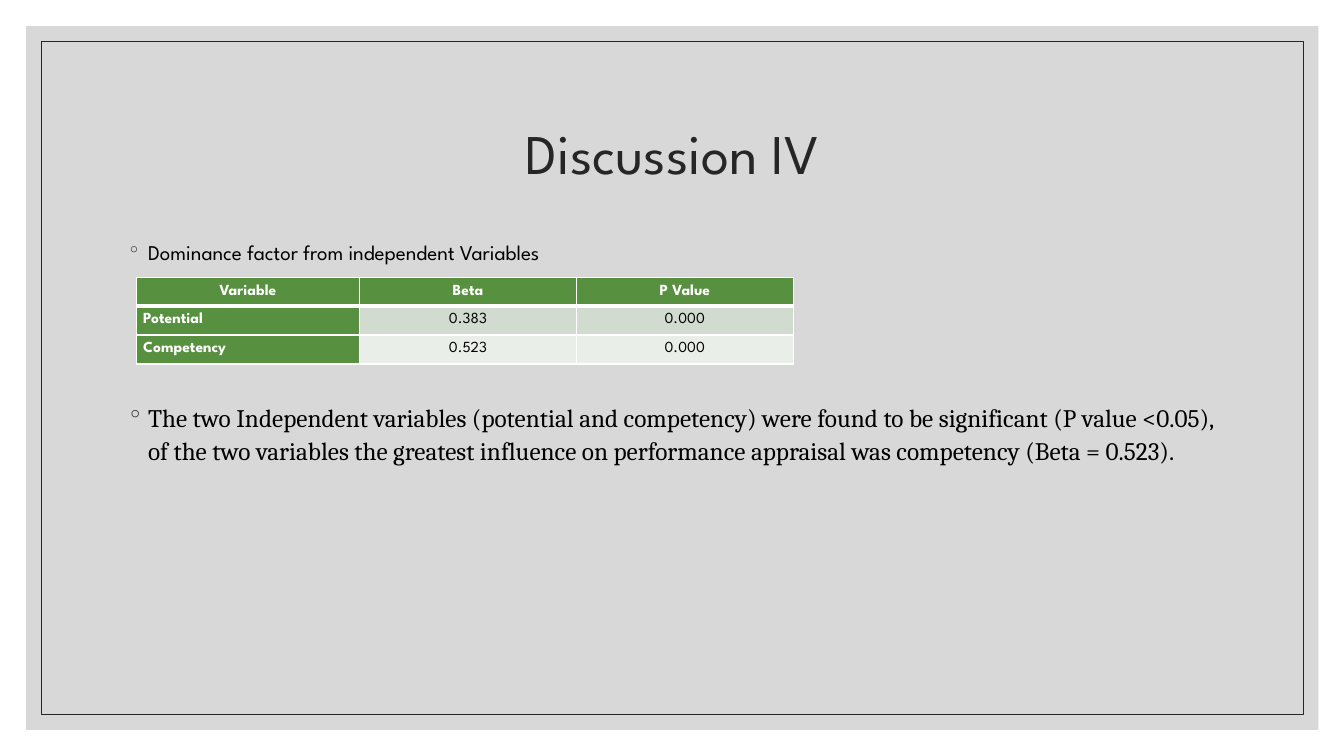
from dataclasses import dataclass

from lxml.etree import SubElement
from pptx import Presentation
from pptx.dml.color import RGBColor
from pptx.enum.shapes import MSO_SHAPE
from pptx.enum.text import MSO_ANCHOR, MSO_AUTO_SIZE, PP_ALIGN
from pptx.oxml.ns import qn
from pptx.util import Emu, Inches, Pt

COLORS = {
    "ink": "262626",
    "text": "000000",
    "white": "FFFFFF",
    "panel": "BFBFBF",
    "green": "57903F",
    "band_dark": "D1DBCF",
    "band_light": "EAEEE8",
}
SANS, SERIF = "League Spartan", "Cambria"
WIDTH, HEIGHT = Inches(13.33), Inches(7.5)


@dataclass(frozen=True)
class Box:
    """Place and size as percentages of the slide."""
    left: float
    top: float
    width: float
    height: float

    def lengths(self) -> tuple[Emu, Emu, Emu, Emu]:
        return (Emu(int(WIDTH * self.left / 100)), Emu(int(HEIGHT * self.top / 100)),
                Emu(int(WIDTH * self.width / 100)), Emu(int(HEIGHT * self.height / 100)))


@dataclass(frozen=True)
class Bullet:
    text: str
    font: str
    size: int
    space_before: int


PANEL = Box(1.95, 3.47, 96.15, 93.07)
FRAME = Box(3.08, 5.47, 93.9, 89.07)
TITLE = Box(8.78, 10.67, 82.5, 20)
BODY = Box(8.78, 30.67, 82.5, 56.13)
TABLE = Box(10.13, 36.67, 48.9, 11.47)

BULLETS = [
    Bullet("Dominance factor from independent Variables", SANS, 15, 9),
    Bullet("The two Independent variables (potential and competency) were found to be "
           "significant (P value <0.05), of the two variables the greatest influence on "
           "performance appraisal was competency (Beta = 0.523).", SERIF, 18, 96),
]
TABLE_ROWS = [
    ("Variable", "Beta", "P Value"),
    ("Potential", "0.383", "0.000"),
    ("Competency", "0.523", "0.000"),
]
COLUMN_SHARES = (0.34, 0.33, 0.33)
ROW_FILLS = ("green", "band_dark", "band_light")


def rgb(name: str) -> RGBColor:
    return RGBColor.from_string(COLORS[name])


def format_runs(paragraph, font: str, size: int, color: str, bold: bool = False) -> None:
    for run in paragraph.runs:
        run.font.name = font
        run.font.size = Pt(size)
        run.font.bold = bold
        run.font.color.rgb = rgb(color)


def add_rectangle(slide, box: Box):
    shape = slide.shapes.add_shape(MSO_SHAPE.RECTANGLE, *box.lengths())
    shape.shadow.inherit = False
    return shape


def add_background(slide) -> None:
    panel = add_rectangle(slide, PANEL)
    panel.fill.solid()
    panel.fill.fore_color.rgb = rgb("panel")
    color = panel.element.spPr.find(qn("a:solidFill"))[0]
    SubElement(color, qn("a:alpha")).set("val", "60000")
    panel.line.fill.background()

    frame = add_rectangle(slide, FRAME)
    frame.fill.background()
    frame.line.color.rgb = rgb("ink")
    frame.line.width = Pt(0.5)


def set_title(slide, text: str) -> None:
    """Fill the title placeholder and bring it in front of the background."""
    title = slide.shapes.title
    title.element.getparent().append(title.element)
    title.left, title.top, title.width, title.height = TITLE.lengths()
    frame = title.text_frame
    frame.text = text
    frame.auto_size = MSO_AUTO_SIZE.NONE
    frame.vertical_anchor = MSO_ANCHOR.MIDDLE
    paragraph = frame.paragraphs[0]
    paragraph.alignment = PP_ALIGN.CENTER
    paragraph.line_spacing = 0.9
    format_runs(paragraph, SANS, 40, "ink")


def add_bullet_mark(paragraph) -> None:
    properties = paragraph._p.get_or_add_pPr()
    properties.set("marL", str(Inches(0.2)))
    properties.set("indent", str(-Inches(0.2)))
    color = SubElement(properties, qn("a:buClr"))
    SubElement(color, qn("a:srgbClr")).set("val", COLORS["ink"])
    SubElement(properties, qn("a:buFont")).set("typeface", SANS)
    SubElement(properties, qn("a:buChar")).set("char", "◦")


def add_body(slide, bullets: list[Bullet]) -> None:
    frame = slide.shapes.add_textbox(*BODY.lengths()).text_frame
    frame.word_wrap = True
    frame.text = "\n".join(bullet.text for bullet in bullets)
    for paragraph, bullet in zip(frame.paragraphs, bullets):
        paragraph.line_spacing = 1.1
        paragraph.space_before = Pt(bullet.space_before)
        add_bullet_mark(paragraph)
        format_runs(paragraph, bullet.font, bullet.size, "text")


def set_borders(cell, top: int, bottom: int) -> None:
    """Draw white borders; the side borders are 1 point wide."""
    properties = cell._tc.get_or_add_tcPr()
    for side, points in (("L", 1), ("R", 1), ("T", top), ("B", bottom)):
        line = SubElement(properties, qn(f"a:ln{side}"), w=str(Pt(points)))
        fill = SubElement(line, qn("a:solidFill"))
        SubElement(fill, qn("a:srgbClr")).set("val", COLORS["white"])


def format_cell(cell, row: int, column: int) -> None:
    is_heading = row == 0 or column == 0
    set_borders(cell, top=3 if row == 1 else 1, bottom=3 if row == 0 else 1)
    cell.fill.solid()
    cell.fill.fore_color.rgb = rgb("green" if is_heading else ROW_FILLS[row])
    cell.margin_left = cell.margin_right = Inches(0.07)
    cell.margin_top = cell.margin_bottom = 0
    paragraph = cell.text_frame.paragraphs[0]
    paragraph.alignment = PP_ALIGN.LEFT if row and not column else PP_ALIGN.CENTER
    paragraph.line_spacing = 1.5
    format_runs(paragraph, SANS, 11, "white" if is_heading else "text", is_heading)


def add_result_table(slide) -> None:
    left, top, width, height = TABLE.lengths()
    table = slide.shapes.add_table(len(TABLE_ROWS), len(COLUMN_SHARES),
                                   left, top, width, height).table
    for column, share in zip(table.columns, COLUMN_SHARES):
        column.width = Emu(int(width * share))
    for row, texts in enumerate(TABLE_ROWS):
        for column, text in enumerate(texts):
            cell = table.cell(row, column)
            cell.text_frame.text = text
            format_cell(cell, row, column)


def main() -> None:
    presentation = Presentation()
    presentation.slide_width, presentation.slide_height = WIDTH, HEIGHT
    slide = presentation.slides.add_slide(presentation.slide_layouts.get_by_name("Title Only"))
    add_background(slide)
    set_title(slide, "Discussion IV")
    add_body(slide, BULLETS)
    add_result_table(slide)
    presentation.save("out.pptx")


if __name__ == "__main__":
    main()
